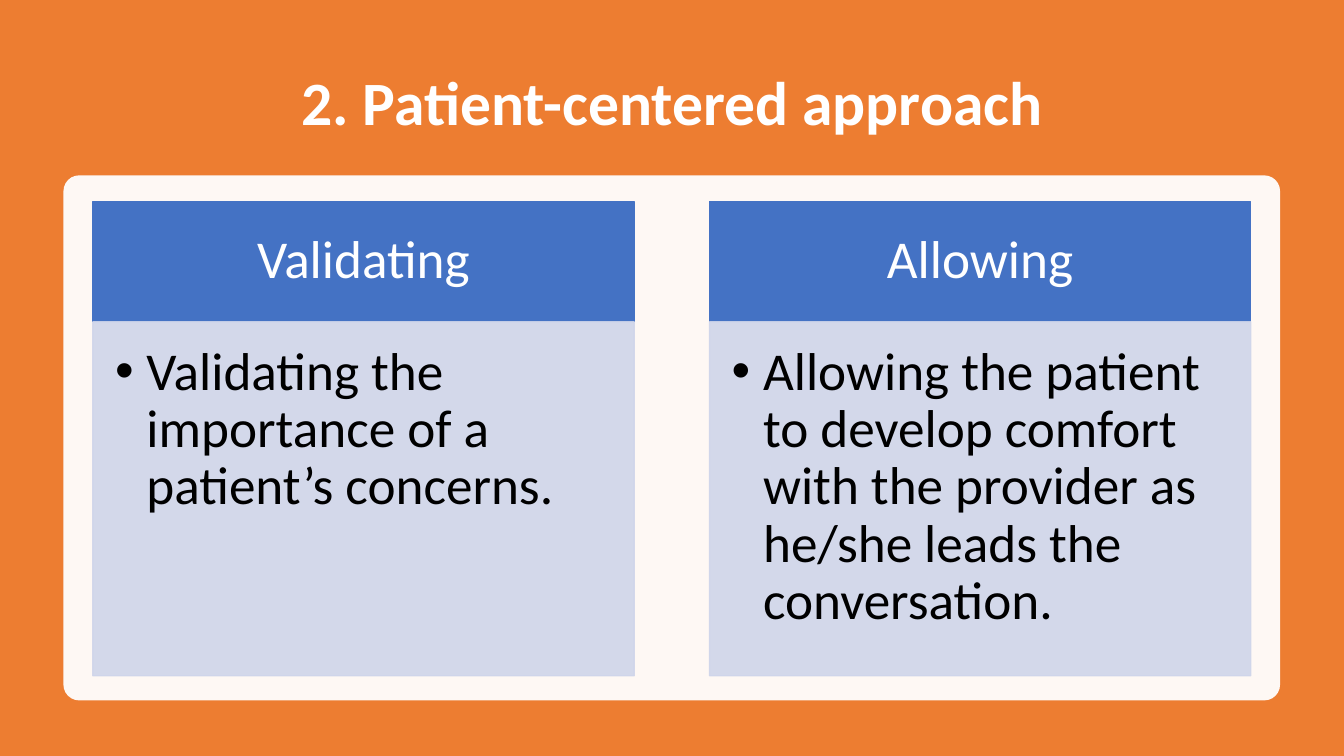
from lxml.etree import SubElement
from pptx import Presentation
from pptx.dml.color import RGBColor
from pptx.enum.shapes import MSO_SHAPE
from pptx.enum.text import MSO_ANCHOR, MSO_AUTO_SIZE, PP_ALIGN
from pptx.oxml.ns import qn
from pptx.util import Cm, Pt

INK = {
    "back": "ED7D31",
    "white": "FFFFFF",
    "head": "4472C4",
    "body": "CFD5EA",
    "black": "000000",
}
CARDS = [
    ("Validating", "Validating the importance of a patient’s concerns."),
    ("Allowing", "Allowing the patient to develop comfort with the provider "
                 "as he/she leads the conversation."),
]
LEFT, STEP, WIDE = 2.34, 15.54, 13.64


def tint(fill, name, alpha=100):
    fill.solid()
    fill.fore_color.rgb = RGBColor.from_string(INK[name])
    if alpha < 100:
        color = fill._xPr.find(".//" + qn("a:srgbClr"))
        SubElement(color, qn("a:alpha"), val=str(alpha * 1000))


def write(shape, text, size=38, color="white", bold=False, align=PP_ALIGN.CENTER,
          anchor=MSO_ANCHOR.MIDDLE, pad=(0.76, 0.43, 0.76, 0.43), after=0, indent=0):
    frame = shape.text_frame
    frame.word_wrap = True
    frame.auto_size = MSO_AUTO_SIZE.NONE
    frame.vertical_anchor = anchor
    frame.margin_left, frame.margin_top, frame.margin_right, frame.margin_bottom = map(Cm, pad)
    par = frame.paragraphs[0]
    par.alignment = align
    par.line_spacing = 0.9
    par.space_before = Pt(0)
    par.space_after = Pt(after)
    if indent:
        props = par._p.get_or_add_pPr()
        props.set("marL", str(Cm(indent)))
        props.set("indent", str(-Cm(indent)))
        SubElement(props, qn("a:buFont"), typeface="Arial")
        SubElement(props, qn("a:buChar"), char="•")
    run = par.add_run()
    run.text = text
    run.font.name = "Calibri"
    run.font.size = Pt(size)
    run.font.bold = bold
    run.font.color.rgb = RGBColor.from_string(INK[color])


class Deck:
    def __init__(self):
        self.prs = Presentation()
        self.prs.slide_width = Cm(33.87)
        self.prs.slide_height = Cm(19.05)
        self.slide = self.prs.slides.add_slide(self.prs.slide_layouts[4])

    def panel(self, kind, box, name, alpha=100):
        shape = self.slide.shapes.add_shape(kind, *map(Cm, box))
        shape.shadow.inherit = False
        tint(shape.fill, name, alpha)
        shape.line.fill.background()
        return shape

    def place(self, slot, box):
        shape = self.slide.placeholders[slot]
        shape.left, shape.top, shape.width, shape.height = map(Cm, box)
        shape.element.getparent().append(shape.element)
        return shape

    def title(self, text, box):
        write(self.place(0, box), text, size=44, bold=True,
              pad=(0.25, 0.13, 0.25, 0.13), after=6)

    def block(self, slot, box, name, text, alpha=100, **style):
        shape = self.place(slot, box)
        tint(shape.fill, name, alpha)
        tint(shape.line.fill, name, alpha)
        shape.line.width = Pt(1)
        write(shape, text, **style)


def main():
    deck = Deck()
    deck.panel(MSO_SHAPE.RECTANGLE, (0, 0, 33.87, 19.05), "back")
    deck.title("2. Patient-centered approach", (LEFT, 1.27, 29.21, 2.79))
    card = deck.panel(MSO_SHAPE.ROUNDED_RECTANGLE, (1.6, 4.42, 30.66, 13.23), "white", 95)
    card.adjustments[0] = 0.03
    for i, (head, body) in enumerate(CARDS):
        left = LEFT + i * STEP
        deck.block(2 * i + 1, (left, 5.08, WIDE, 3.03), "head", head)
        deck.block(2 * i + 2, (left, 8.11, WIDE, 8.92), "body", body, alpha=90,
                   color="black", align=PP_ALIGN.LEFT, anchor=MSO_ANCHOR.TOP,
                   pad=(0.56, 0.56, 0.76, 0.84), indent=0.79)
    deck.prs.save("out.pptx")


if __name__ == "__main__":
    main()
